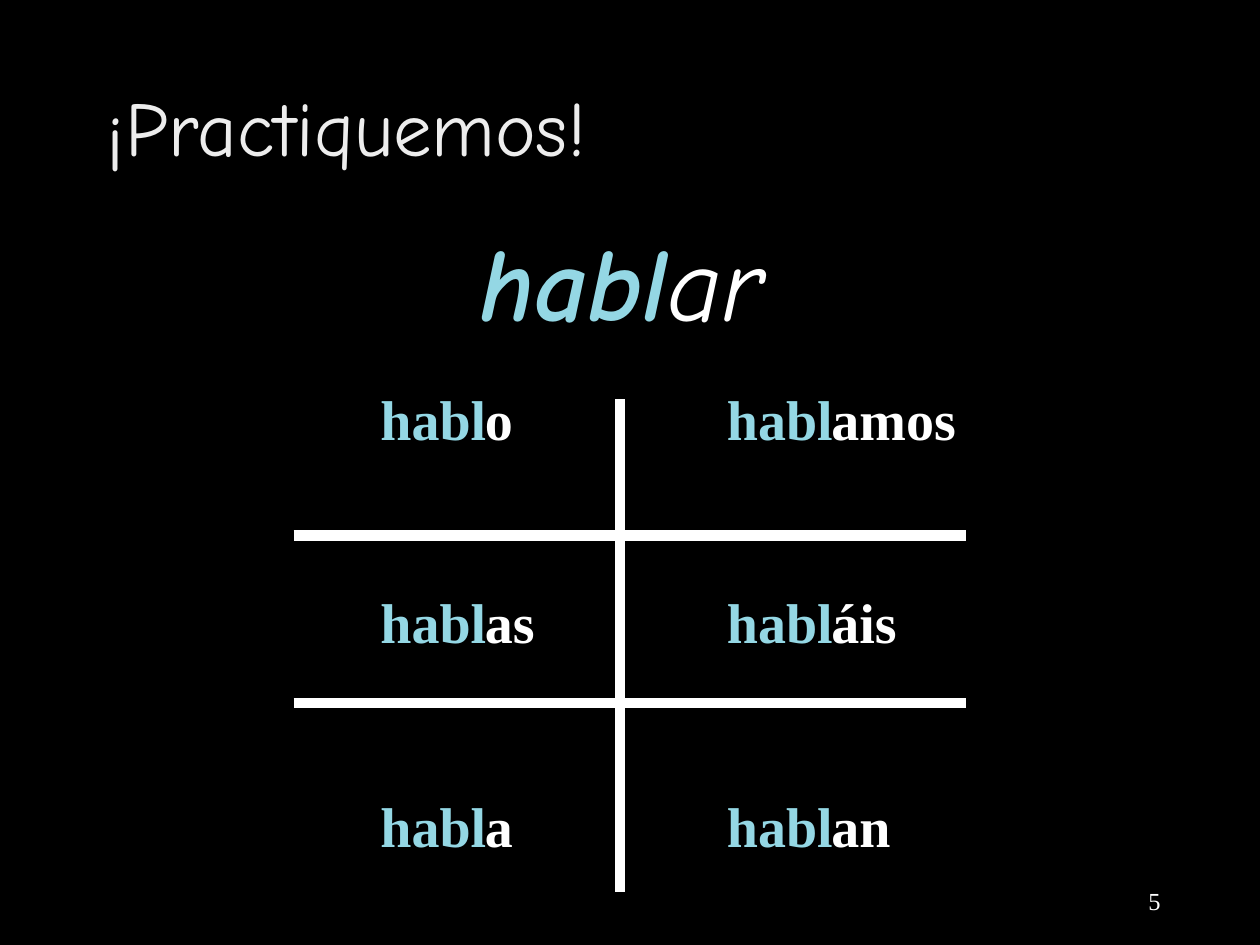
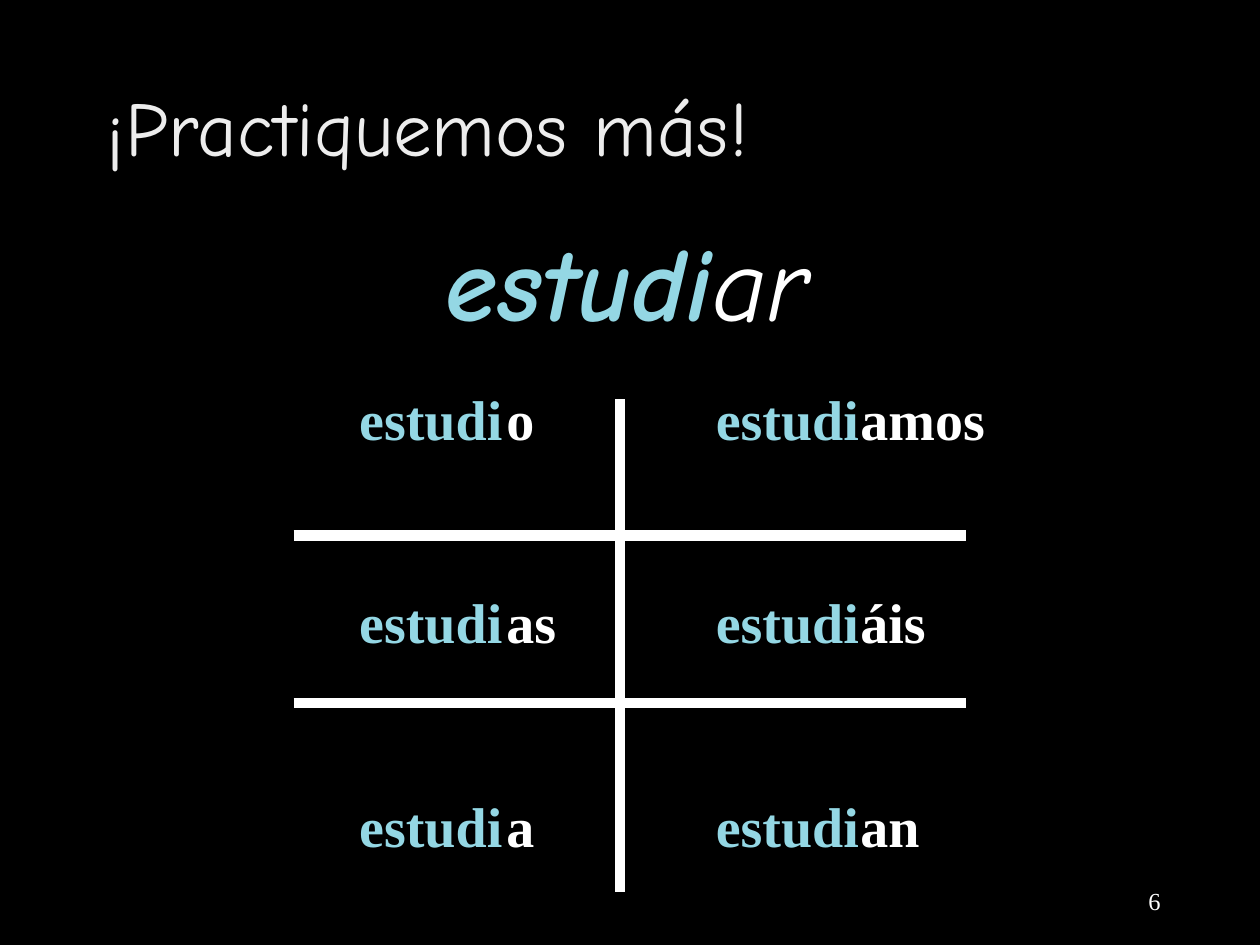
from dataclasses import dataclass

from lxml import etree
from pptx import Presentation
from pptx.dml.color import RGBColor
from pptx.enum.shapes import MSO_CONNECTOR
from pptx.enum.text import MSO_ANCHOR, MSO_AUTO_SIZE, PP_ALIGN
from pptx.oxml.ns import qn
from pptx.util import Inches, Pt

LEFT, CENTER, RIGHT = PP_ALIGN.LEFT, PP_ALIGN.CENTER, PP_ALIGN.RIGHT
MIDDLE, TOP = MSO_ANCHOR.MIDDLE, MSO_ANCHOR.TOP
GROW = MSO_AUTO_SIZE.SHAPE_TO_FIT_TEXT
STRAIGHT = MSO_CONNECTOR.STRAIGHT
BLANK_LAYOUT = 6


@dataclass(frozen=True)
class Theme:
    background: RGBColor = RGBColor(0x00, 0x00, 0x00)
    title: RGBColor = RGBColor(0xED, 0xED, 0xED)
    stem: RGBColor = RGBColor(0x94, 0xD7, 0xE4)
    plain: RGBColor = RGBColor(0xFF, 0xFF, 0xFF)
    display_font: str = "Comic Neue"
    body_font: str = "Times New Roman"
    title_size: int = 44
    verb_size: int = 60
    form_size: int = 32
    number_size: int = 14
    form_gap: int = 78
    line_width: int = 6


# Endings of the -ar verbs: singular column, plural column
ENDINGS = (("o", "as", "a"), ("amos", "áis", "an"))
ENDING_WIDTHS = (0.6, 1.19)
FORMS_TOP, FORMS_HEIGHT = 3, 3.83
GRID_LINES = (
    (4.92, 3.17, 4.92, 7.08),
    (2.33, 4.25, 7.67, 4.25),
    (2.33, 5.58, 7.67, 5.58),
)


@dataclass(frozen=True)
class Lesson:
    number: int
    title: str
    title_height: float
    stem: str
    verb_left: float
    verb_width: float
    stem_lefts: tuple
    stem_width: float
    ending_lefts: tuple


LESSONS = (
    Lesson(5, "¡Practiquemos!", 1.42, "habl", 3.58, 2.7,
           (2.92, 5.67), 1.04, (3.75, 6.5)),
    Lesson(6, "¡Practiquemos más!", 1.25, "estudi", 3.25, 3.45,
           (2.75, 5.58), 1.34, (3.92, 6.73)),
)


class SlideBuilder:
    def __init__(self, presentation, theme):
        self.presentation = presentation
        self.theme = theme
        self.slide = None

    def new_slide(self):
        layout = self.presentation.slide_layouts[BLANK_LAYOUT]
        self.slide = self.presentation.slides.add_slide(layout)
        fill = self.slide.background.fill
        fill.solid()
        fill.fore_color.rgb = self.theme.background

    def text_box(self, left, top, width, height, anchor=TOP, grow=False):
        shape = self.slide.shapes.add_textbox(
            Inches(left), Inches(top), Inches(width), Inches(height))
        text_frame = shape.text_frame
        text_frame.vertical_anchor = anchor
        text_frame.word_wrap = not grow
        if grow:
            text_frame.auto_size = GROW
        return text_frame

    def style(self, run, font_name, size, color, bold=False, italic=False):
        font = run.font
        font.name, font.size = font_name, Pt(size)
        font.bold, font.italic = bold, italic
        font.color.rgb = color

    def title(self, text, height):
        middle = 1.04
        text_frame = self.text_box(0.75, middle - height / 2, 8.5, height, MIDDLE)
        text_frame.text = text
        paragraph = text_frame.paragraphs[0]
        paragraph.line_spacing = 0.9
        self.style(paragraph.runs[0], self.theme.display_font,
                   self.theme.title_size, self.theme.title)

    def slide_number(self, number):
        text_frame = self.text_box(7.06, 6.95, 2.25, 0.4, MIDDLE)
        text_frame.text = str(number)
        paragraph = text_frame.paragraphs[0]
        paragraph.alignment = RIGHT
        self.style(paragraph.runs[0], self.theme.body_font,
                   self.theme.number_size, self.theme.plain)

    def infinitive(self, stem, left, width):
        text_frame = self.text_box(left, 1.67, width, 1.1, grow=True)
        paragraph = text_frame.paragraphs[0]
        paragraph.alignment = CENTER
        for text, color, bold in ((stem, self.theme.stem, True),
                                  ("ar", self.theme.plain, False)):
            run = paragraph.add_run()
            run.text = text
            self.style(run, self.theme.display_font, self.theme.verb_size,
                       color, bold, italic=True)

    def form_column(self, texts, left, width, color, alignment):
        text_frame = self.text_box(left, FORMS_TOP, width, FORMS_HEIGHT, grow=True)
        text_frame.text = "\n".join(texts)
        for index, paragraph in enumerate(text_frame.paragraphs):
            paragraph.alignment = alignment
            if index:
                paragraph.space_before = Pt(self.theme.form_gap)
            self.style(paragraph.runs[0], self.theme.body_font,
                       self.theme.form_size, color, bold=True)

    def line(self, *ends):
        connector = self.slide.shapes.add_connector(
            STRAIGHT, *(Inches(end) for end in ends))
        connector.line.color.rgb = self.theme.plain
        connector.line.width = Pt(self.theme.line_width)
        etree.SubElement(connector.element.spPr, qn("a:effectLst"))


def build_lesson(builder, lesson):
    theme = builder.theme
    builder.new_slide()

    # Heading, page number and verb
    builder.title(lesson.title, lesson.title_height)
    builder.slide_number(lesson.number)
    builder.infinitive(lesson.stem, lesson.verb_left, lesson.verb_width)

    # Stems, then the grid, then the endings
    for left in lesson.stem_lefts:
        builder.form_column([lesson.stem] * 3, left, lesson.stem_width,
                            theme.stem, CENTER)
    for ends in GRID_LINES:
        builder.line(*ends)
    for texts, left, width in zip(ENDINGS, lesson.ending_lefts, ENDING_WIDTHS):
        builder.form_column(texts, left, width, theme.plain, LEFT)


def main():
    presentation = Presentation()
    presentation.slide_width = Inches(10)
    presentation.slide_height = Inches(7.5)
    builder = SlideBuilder(presentation, Theme())
    for lesson in LESSONS:
        build_lesson(builder, lesson)
    presentation.save("out.pptx")


if __name__ == "__main__":
    main()
